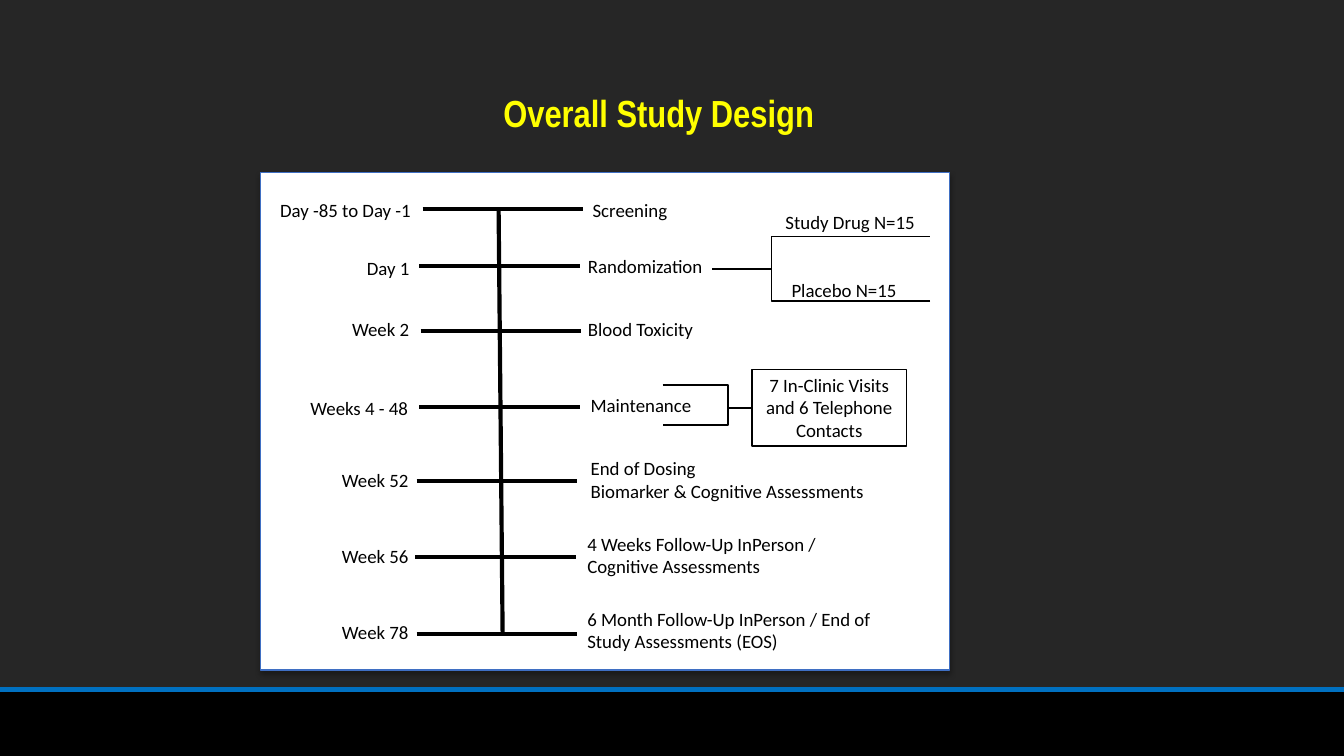
"""Build the Overall Study Design slide: a vertical visit timeline with two study arms."""
from lxml.etree import SubElement
from pptx import Presentation
from pptx.dml.color import RGBColor
from pptx.enum.shapes import MSO_CONNECTOR, MSO_SHAPE
from pptx.enum.text import MSO_ANCHOR, MSO_AUTO_SIZE, PP_ALIGN
from pptx.oxml.ns import qn
from pptx.util import Inches, Pt

THEME = {
    "background": RGBColor.from_string("262626"),
    "footer": RGBColor.from_string("000000"),
    "footer_rule": RGBColor.from_string("0070C0"),
    "panel": RGBColor.from_string("FFFFFF"),
    "panel_edge": RGBColor.from_string("3F6FC3"),
    "ink": RGBColor.from_string("000000"),
    "heading": RGBColor.from_string("FFFF00"),
    "heading_font": "Arial Narrow",
    "body_font": "Calibri",
    "heading_size": Pt(20.2),
    "body_size": Pt(10.1),
    "thin": Pt(0.75),
    "branch": Pt(1),
    "axis": Pt(2.25),
    "rule": Pt(3),
}

deck = Presentation()
deck.slide_width = Inches(10)
deck.slide_height = deck.slide_width * 9 // 16
slide = deck.slides.add_slide(deck.slide_layouts[5])
slide.background.fill.solid()
slide.background.fill.fore_color.rgb = THEME["background"]
shapes = slide.shapes
COLUMN = deck.slide_width / 100
ROW = deck.slide_height / 56.25


def connect(x1, y1, x2, y2, width, color="ink"):
    line = shapes.add_connector(MSO_CONNECTOR.STRAIGHT, round(x1 * COLUMN), round(y1 * ROW),
                                round(x2 * COLUMN), round(y2 * ROW))
    line.line.color.rgb, line.line.width = THEME[color], THEME[width]
    SubElement(line._element.spPr, qn("a:effectLst"))
    return line


def write(text, x, y, width, height=1.9, outline=None, align=PP_ALIGN.LEFT):
    place = [round(v) for v in (x * COLUMN, y * ROW, width * COLUMN, height * ROW)]
    if outline:
        box = shapes.add_shape(MSO_SHAPE.RECTANGLE, *place)
        box.shadow.inherit = False
        box.fill.background()
        box.line.color.rgb, box.line.width = THEME["ink"], THEME[outline]
    else:
        box = shapes.add_textbox(*place)
    frame = box.text_frame
    frame.text = text
    layout = {"word_wrap": True, "vertical_anchor": MSO_ANCHOR.TOP,
              "margin_left": Inches(0.06), "margin_right": Inches(0.06),
              "margin_top": Inches(0.03), "margin_bottom": Inches(0.03)}
    for name, value in layout.items():
        setattr(frame, name, value)
    for paragraph in frame.paragraphs:
        paragraph.alignment = align
        paragraph.font.name, paragraph.font.size = THEME["body_font"], THEME["body_size"]
        paragraph.font.color.rgb = THEME["ink"]
    return box


heading = shapes.title
heading.left, heading.top = round(35.35 * COLUMN), round(6.2 * ROW)
heading.width, heading.height = round(27.3 * COLUMN), round(2.5 * ROW)
heading.text_frame.text = "Overall Study Design"
heading.text_frame.auto_size = MSO_AUTO_SIZE.NONE
heading.text_frame.vertical_anchor = MSO_ANCHOR.TOP
heading_line = heading.text_frame.paragraphs[0]
heading_line.alignment = PP_ALIGN.CENTER
for name, value in {"name": THEME["heading_font"], "size": THEME["heading_size"], "bold": True}.items():
    setattr(heading_line.font, name, value)
heading_line.font.color.rgb = THEME["heading"]

footer_top = round(51.3 * ROW)
footer = shapes.add_shape(MSO_SHAPE.RECTANGLE, 0, footer_top, deck.slide_width,
                          deck.slide_height - footer_top)
footer.shadow.inherit = False
footer.fill.solid()
footer.fill.fore_color.rgb = THEME["footer"]
footer.line.fill.background()
connect(0, 51.3, 100, 51.3, "rule", "footer_rule")

panel = shapes.add_shape(MSO_SHAPE.RECTANGLE, round(19.4 * COLUMN), round(12.85 * ROW),
                         round(51.25 * COLUMN), round(37 * ROW))
panel.shadow.inherit = False
panel.fill.solid()
panel.fill.fore_color.rgb = THEME["panel"]
panel.line.color.rgb, panel.line.width = THEME["panel_edge"], THEME["thin"]
shadow = SubElement(panel._element.spPr.find(qn("a:effectLst")), qn("a:outerShdw"),
                    blurRad=str(Pt(3.1)), dist=str(Pt(1.8)), dir="5400000", rotWithShape="0")
shadow_color = SubElement(shadow, qn("a:srgbClr"), val="000000")
SubElement(shadow_color, qn("a:alpha"), val="35000")

visits = [
    ("Day -85 to Day -1", 20.25, 14.5, 31.45, 15.55, "Screening", 43.5, 14.5, 11.3),
    ("Day 1", 26.7, 18.8, 31.2, 19.8, "Randomization", 43.15, 18.65, 11.3),
    ("Week 2", 25.6, 23.35, 31.3, 24.6, "Blood Toxicity", 43.15, 23.35, 11.3),
    ("Weeks 4 - 48", 22.5, 29.2, 31.2, 30.3, "Maintenance", 43.35, 29, 11.3),
    ("Week 52", 24.85, 34.6, 31, 35.8,
     "End of Dosing\nBiomarker & Cognitive Assessments", 43.35, 33.7, 23.1),
    ("Week 56", 24.85, 40.25, 30.9, 41.45,
     "4 Weeks Follow-Up InPerson / Cognitive Assessments", 43.1, 39.3, 20.5),
    ("Week 78", 24.85, 45.9, 31, 47.2,
     "6 Month Follow-Up InPerson / End of Study Assessments (EOS)", 43.1, 44.9, 22.9),
]
for time, time_x, time_y, tick_x, tick_y, event, event_x, event_y, event_width in visits:
    write(time, time_x, time_y, 13.7)
    write(event, event_x, event_y, event_width)
    connect(tick_x, tick_y, tick_x + 11.95, tick_y, "axis")
connect(37.1, visits[0][4], 37.4, visits[-1][4], "axis")

brackets = []
for kind, x, y, width, height in [(MSO_SHAPE.LEFT_BRACKET, 57.4, 17.6, 11.8, 4.8),
                                  (MSO_SHAPE.RIGHT_BRACKET, 49.3, 28.65, 4.85, 3)]:
    bracket = shapes.add_shape(kind, round(x * COLUMN), round(y * ROW),
                               round(width * COLUMN), round(height * ROW))
    bracket.adjustments[0] = 0
    bracket.shadow.inherit = False
    bracket.fill.background()
    bracket.line.color.rgb, bracket.line.width = THEME["ink"], THEME["branch"]
    brackets.append(bracket)

write("Study Drug N=15", 57.85, 15.4, 11.3)
write("Placebo N=15", 58.3, 20.45, 11.3)
connect(53, 20, 57.4, 20, "branch").end_connect(brackets[0], 1)

contacts = write("7 In-Clinic Visits and 6 Telephone Contacts", 55.95, 27.5, 11.5, 5.7,
                 outline="thin", align=PP_ALIGN.CENTER)
connect(54.15, 30.35, 55.95, 30.35, "branch").end_connect(contacts, 1)

deck.save("out.pptx")
